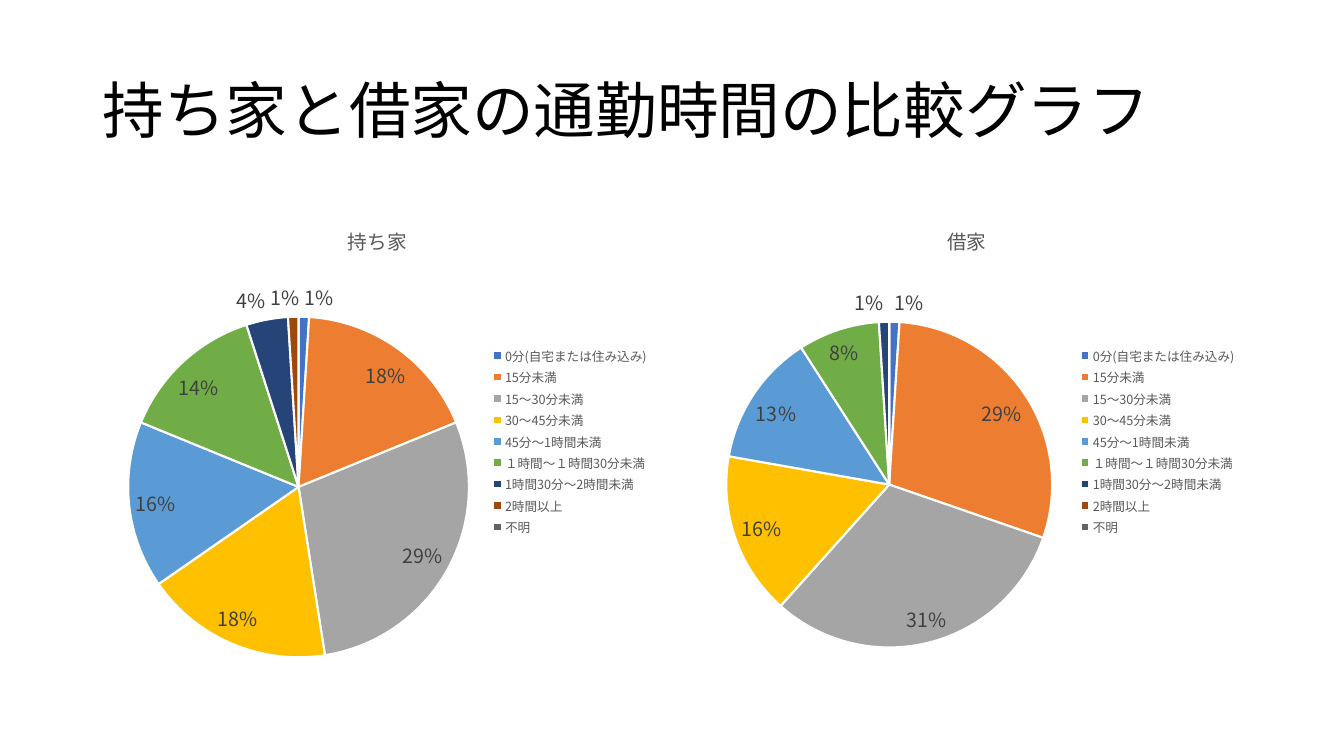
import pptx
import pptx.chart.data
import pptx.dml.color
import pptx.enum.chart
import pptx.enum.text
import pptx.oxml
import pptx.oxml.ns
import pptx.util

Inches = pptx.util.Inches
FONT = "Noto Sans CJK JP"
COLORS = {"title": "000000", "label": "404040", "caption": "595959", "edge": "FFFFFF"}
COMMUTE_COLORS = {
    "0分(自宅または住み込み)": "4472C4",
    "15分未満": "ED7D31",
    "15～30分未満": "A5A5A5",
    "30～45分未満": "FFC000",
    "45分～1時間未満": "5B9BD5",
    "１時間～１時間30分未満": "70AD47",
    "1時間30分～2時間未満": "264478",
    "2時間以上": "9E480E",
    "不明": "636363",
}
# Layouts are fractions of the chart box: x, y, then w, h where used.
HOUSING = [
    {"name": "持ち家", "left": 0.92,
     "shares": [0.01, 0.18, 0.29, 0.18, 0.16, 0.14, 0.04, 0.01, 0],
     "caption": (0.44, 0.04), "pie": (0.06, 0.24, 0.6, 0.71)},
    {"name": "借家", "left": 6.75,
     "shares": [0.01, 0.29, 0.31, 0.16, 0.13, 0.08, 0.01, 0, 0],
     "caption": (0.46, 0.04), "pie": (0.08, 0.25, 0.57, 0.68)},
]
LEGEND = (0.68, 0.295, 0.31, 0.41)


def rgb(name):
    return pptx.dml.color.RGBColor.from_string(COLORS.get(name, name))


def style_font(font, size, color):
    for key, value in {"name": FONT, "size": pptx.util.Pt(size), "bold": False}.items():
        setattr(font, key, value)
    font.color.rgb = rgb(color)
    if hasattr(font, "_rPr"):
        east_asian = font._rPr.makeelement(pptx.oxml.ns.qn("a:ea"), {"typeface": FONT})
        font._rPr.find(pptx.oxml.ns.qn("a:latin")).addnext(east_asian)


def set_layout(part, box, inner=False):
    """Place a chart part by fractions of the chart box."""
    for old in part.findall(pptx.oxml.ns.qn("c:layout")):
        part.remove(old)
    target = '<c:layoutTarget val="inner"/>' if inner else ""
    modes = "".join(f'<c:{axis}Mode val="edge"/>' for axis in "xy")
    sizes = "".join(f'<c:{key} val="{value}"/>' for key, value in zip("xywh", box))
    layout = pptx.oxml.parse_xml(
        f'<c:layout {pptx.oxml.ns.nsdecls("c")}><c:manualLayout>'
        f"{target}{modes}{sizes}</c:manualLayout></c:layout>")
    before = {"title": "tx", "legend": "legendPos"}.get(part.tag.split("}")[1])
    if before:
        part.find(pptx.oxml.ns.qn(f"c:{before}")).addnext(layout)
    else:
        part.insert(0, layout)


def add_heading(slide, left, top, width, height):
    frame = slide.shapes.add_textbox(left, top, width, height).text_frame
    frame.word_wrap = True
    frame.vertical_anchor = pptx.enum.text.MSO_ANCHOR.MIDDLE
    paragraph = frame.paragraphs[0]
    paragraph.line_spacing = 0.9
    heading = paragraph.add_run()
    heading.text = "持ち家と借家の通勤時間の比較グラフ"
    style_font(heading.font, 44, "title")


def add_commute_pie(slide, housing, left, top, width, height):
    data = pptx.chart.data.CategoryChartData(number_format="0%")
    data.categories = list(COMMUTE_COLORS)
    data.add_series(housing["name"], housing["shares"])
    chart = slide.shapes.add_chart(
        pptx.enum.chart.XL_CHART_TYPE.PIE, left, top, width, height, data).chart
    style_font(chart.font, 10, "title")

    chart.has_title = True
    caption = chart.chart_title.text_frame.paragraphs[0].add_run()
    caption.text = housing["name"]
    style_font(caption.font, 14, "caption")
    set_layout(chart.chart_title._element, housing["caption"])

    chart.has_legend = True
    chart.legend.position = pptx.enum.chart.XL_LEGEND_POSITION.RIGHT
    chart.legend.include_in_layout = False
    style_font(chart.legend.font, 9, "caption")
    set_layout(chart.legend._element, LEGEND)

    plot = chart.plots[0]
    plot.vary_by_categories = True
    set_layout(chart._chartSpace.chart.plotArea, housing["pie"], inner=True)
    for index, color in enumerate(COMMUTE_COLORS.values()):
        slice_format = plot.series[0].points[index].format
        slice_format.fill.solid()
        slice_format.fill.fore_color.rgb = rgb(color)
        slice_format.line.color.rgb = rgb("edge")
        slice_format.line.width = pptx.util.Pt(1.5)

    labels = plot.series[0].data_labels
    label_format = {
        "show_value": True,
        "number_format": "0%",
        "number_format_is_linked": False,
        "position": pptx.enum.chart.XL_LABEL_POSITION.BEST_FIT,
    }
    for key, value in label_format.items():
        setattr(labels, key, value)
    style_font(labels.font, 14, "label")


def main():
    deck = pptx.Presentation()
    deck.slide_width, deck.slide_height = Inches(13.33), Inches(7.5)
    slide = deck.slides.add_slide(deck.slide_layouts[6])
    add_heading(slide, Inches(0.92), Inches(0.4), Inches(11.5), Inches(1.45))
    for housing in HOUSING:
        add_commute_pie(slide, housing, Inches(housing["left"]), Inches(2),
                        Inches(5.67), Inches(4.76))
    deck.save("out.pptx")


if __name__ == "__main__":
    main()
